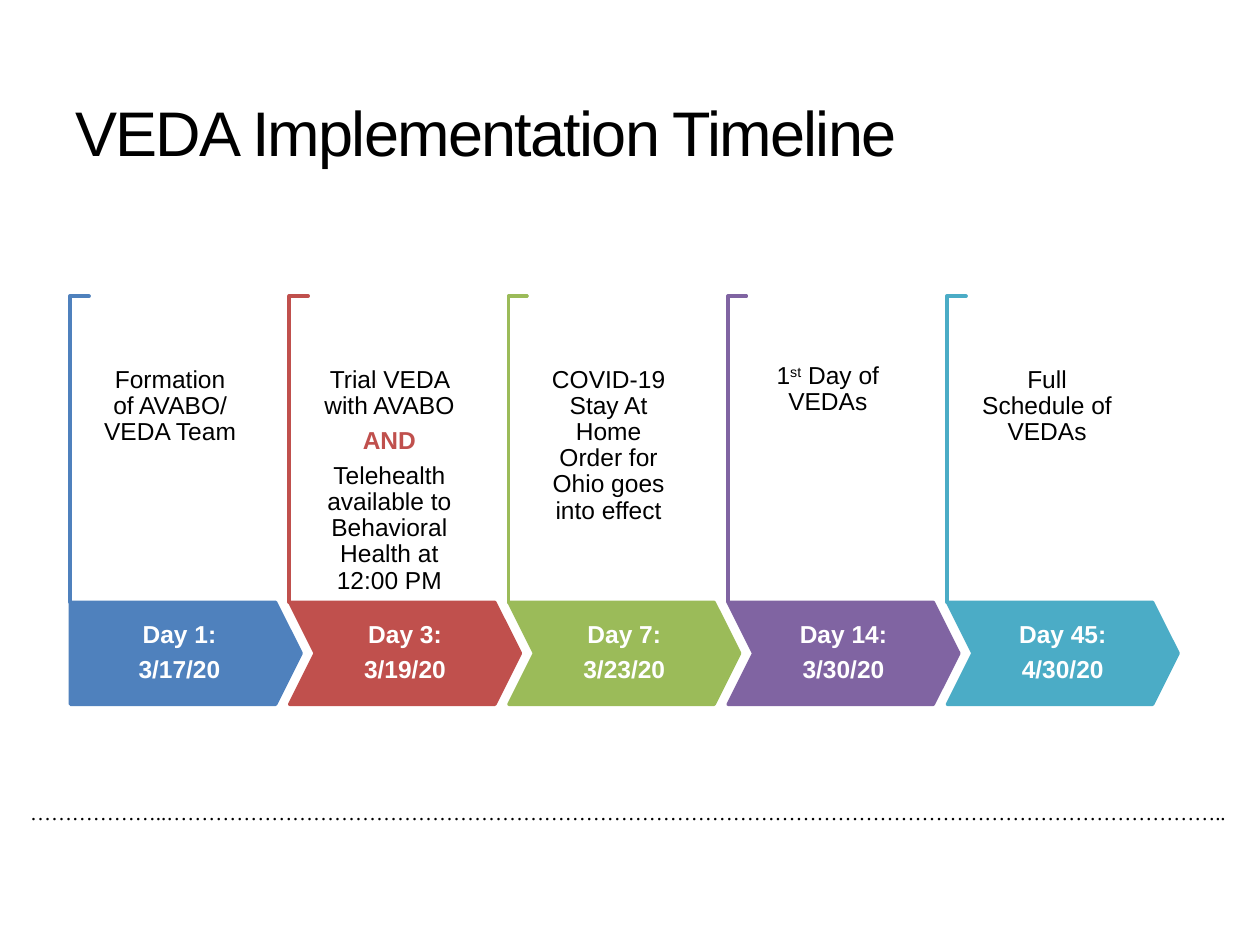
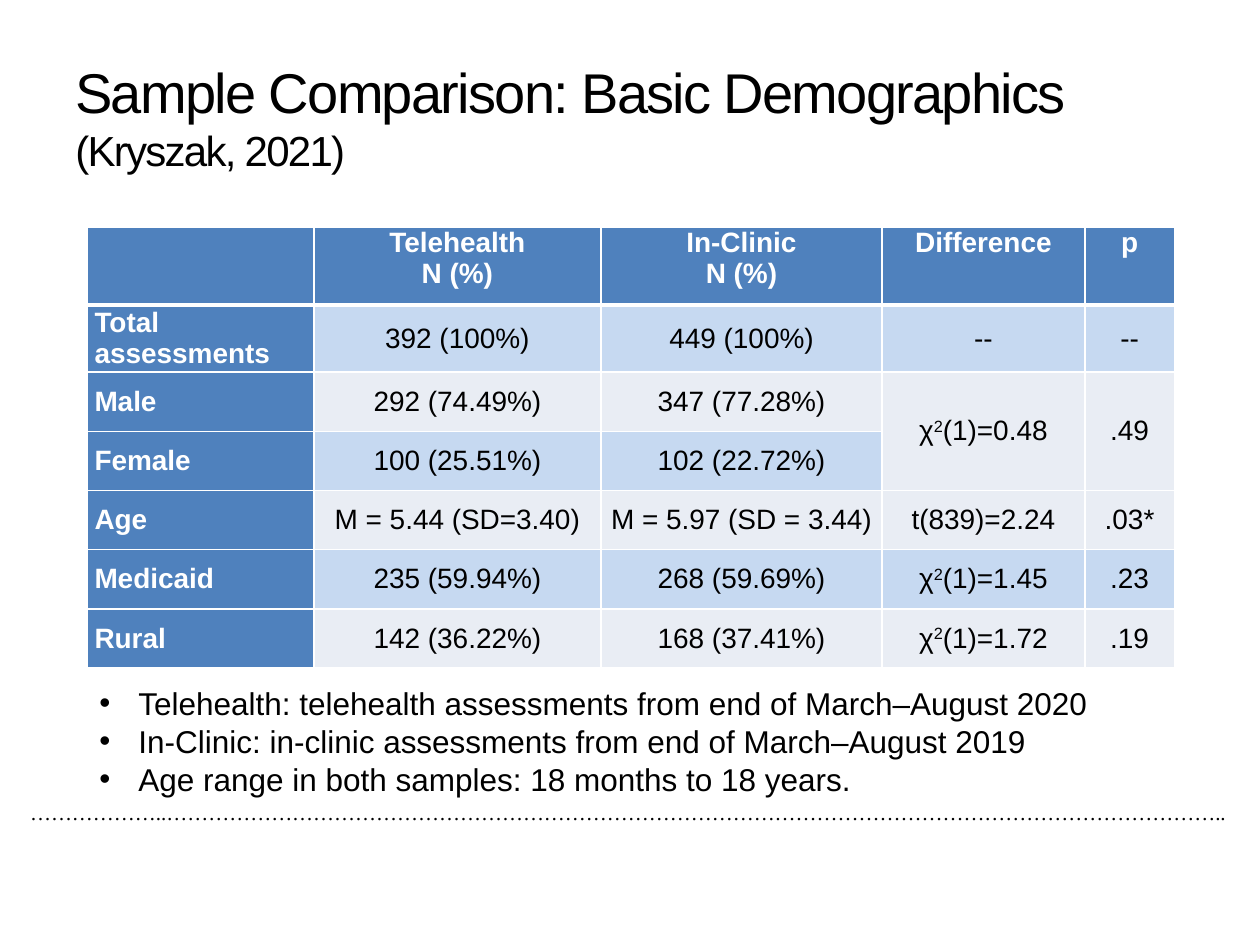
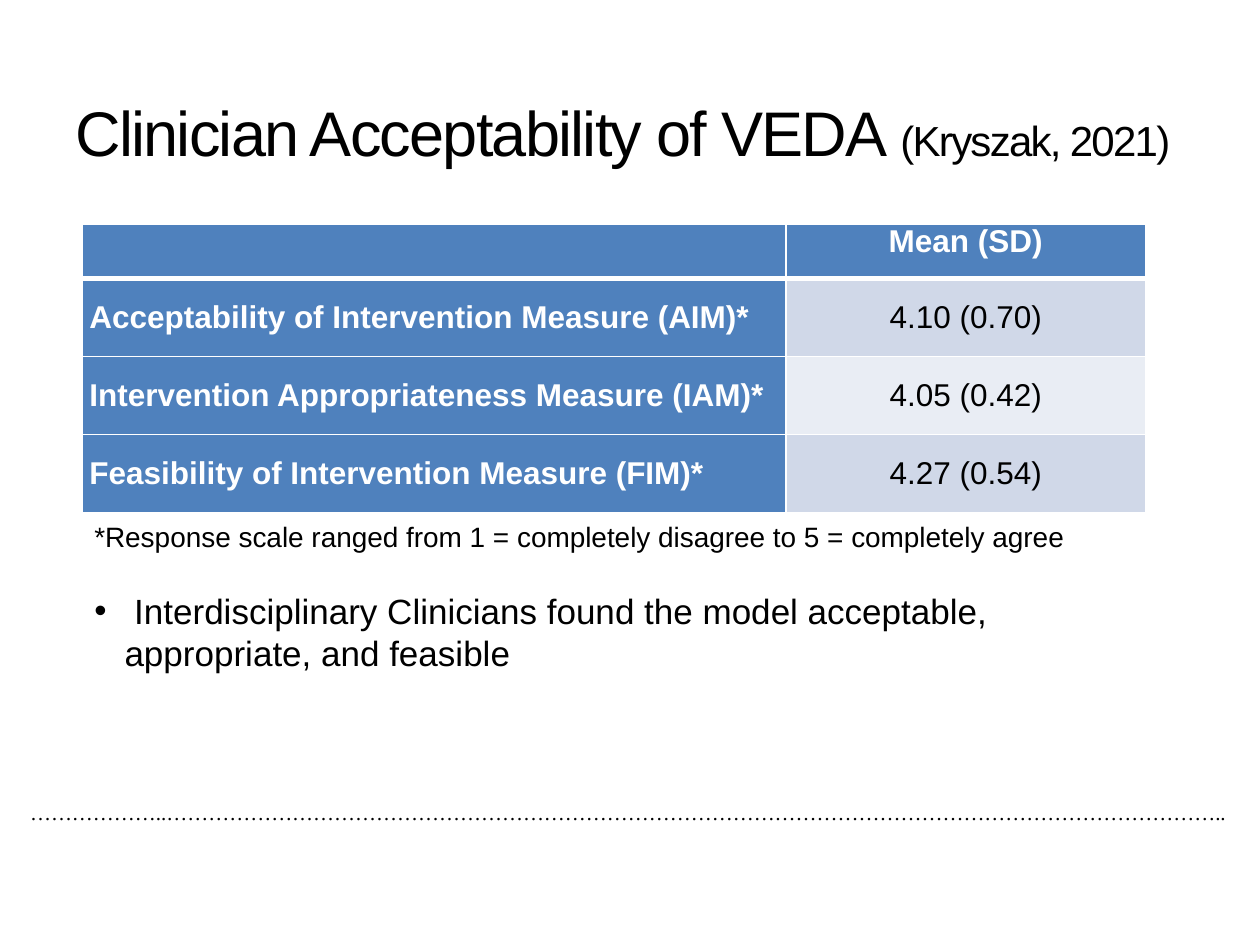
import pptx
import pptx.util
import pptx.dml.color
import pptx.enum.shapes
import pptx.enum.text
import pptx.oxml.ns
from lxml import etree

Inches, Pt = pptx.util.Inches, pptx.util.Pt
SHAPE = pptx.enum.shapes.MSO_SHAPE
ALIGN = pptx.enum.text.PP_ALIGN
MID = pptx.enum.text.MSO_ANCHOR.MIDDLE
TOP = pptx.enum.text.MSO_ANCHOR.TOP

HUES = {
    "black": "000000", "white": "FFFFFF",
    "blue": "4F81BD", "red": "C0504D", "green": "9BBB59",
    "purple": "8064A2", "teal": "4BACC6",
    "sky": "C6D9F1", "pale": "E9EDF4", "mist": "D0D8E8",
}
FACE = "Arial"
DOTS = "…" * 6 + ".." + "…" * 50 + ".."
CITE = ("(Kryszak, 2021)", {"size": 24})

# hue, day, date, paragraphs, space after each paragraph
STEPS = [
    ("blue", "Day 1:", "3/17/20", ["Formation of AVABO/", "VEDA Team"], 0),
    ("red", "Day 3:", "3/19/20",
     ["Trial VEDA with AVABO", [("AND", {"hue": "red", "bold": True})],
      "Telehealth available to Behavioral Health at 12:00 PM"], 5),
    ("green", "Day 7:", "3/23/20",
     ["COVID-19 Stay At Home Order for Ohio goes into effect"], 5),
    ("purple", "Day 14:", "3/30/20", ["1^st^ Day of VEDAs"], 0),
    ("teal", "Day 45:", "4/30/20", ["Full Schedule of VEDAs"], 0),
]

SAMPLE = {
    "at": (0.69, 1.8), "size": 16, "bands": ("sky", "pale"),
    "cols": [1.8, 2.28, 2.23, 1.61, 0.71],
    "rows": [0.62, 0.5] + [0.47] * 5,
    "cells": [
        ["", "Telehealth\nN (%)", "In-Clinic\nN (%)", "Difference", "p"],
        ["Total assessments", "392 (100%)", "449 (100%)", "--", "--"],
        ["Male", "292 (74.49%)", "347 (77.28%)", "χ^2^(1)=0.48", ".49"],
        ["Female", "100 (25.51%)", "102 (22.72%)", "", ""],
        ["Age", "M = 5.44 (SD=3.40)", "M = 5.97 (SD = 3.44)",
         "t(839)=2.24", ".03*"],
        ["Medicaid", "235 (59.94%)", "268 (59.69%)", "χ^2^(1)=1.45", ".23"],
        ["Rural", "142 (36.22%)", "168 (37.41%)", "χ^2^(1)=1.72", ".19"],
    ],
}
NOTES = [
    "Telehealth: telehealth assessments from end of March–August 2020",
    "In-Clinic: in-clinic assessments from end of March–August 2019",
    "Age range in both samples: 18 months to 18 years.",
]

RATING = {
    "at": (0.65, 1.78), "size": 18, "bands": ("mist", "pale"),
    "cols": [5.59, 2.85],
    "rows": [0.43] + [0.62] * 3,
    "cells": [
        ["", "Mean (SD)"],
        ["Acceptability of Intervention Measure (AIM)*", "4.10 (0.70)"],
        ["Intervention Appropriateness Measure (IAM)*", "4.05 (0.42)"],
        ["Feasibility of Intervention Measure (FIM)*", "4.27 (0.54)"],
    ],
}
SCALE = "*Response scale ranged from 1 = completely disagree to 5 = completely agree"
FOUND = " Interdisciplinary Clinicians found the model acceptable, appropriate, and feasible"


def rgb(hue):
    return pptx.dml.color.RGBColor.from_string(HUES[hue])


def child(node, tag, **attrs):
    return etree.SubElement(node, pptx.oxml.ns.qn(tag), attrs)


def add_run(para, text, size, hue="black", bold=False, face=FACE, track=0):
    """Add text to a paragraph; parts between ^ marks are superscript."""
    for i, part in enumerate(text.split("^")):
        run = para.add_run()
        run.text = part
        font = run.font
        font.size, font.name, font.bold = Pt(size), face, bold
        font.color.rgb = rgb(hue)
        props = run._r.get_or_add_rPr()
        if track:
            props.set("spc", str(track))
        if i % 2:
            props.set("baseline", "30000")


def write(frame, paras, align=ALIGN.LEFT, line=None, after=0, **base):
    """Fill a frame; a paragraph is a string or a list of (text, changes)."""
    for i, runs in enumerate(paras):
        para = frame.add_paragraph() if i else frame.paragraphs[0]
        para.alignment = align
        if line:
            para.line_spacing = line
        if after:
            para.space_after = Pt(after)
        for text, diff in [(runs, {})] if isinstance(runs, str) else runs:
            add_run(para, text, **{**base, **diff})


def add_text(slide, at, paras, anchor=TOP, inset=(0.1, 0.05, 0.1, 0.05), **style):
    frame = slide.shapes.add_textbox(*map(Inches, at)).text_frame
    frame.word_wrap = True
    frame.vertical_anchor = anchor
    (frame.margin_left, frame.margin_top,
     frame.margin_right, frame.margin_bottom) = map(Inches, inset)
    write(frame, paras, **style)
    return frame


def bullet(para, indent):
    props = para._p.get_or_add_pPr()
    props.set("marL", str(Inches(indent)))
    props.set("indent", str(-Inches(indent)))
    child(props, "a:buFont", typeface=FACE)
    child(props, "a:buChar", char="•")


def add_slide(deck, title, size, line=None):
    slide = deck.slides.add_slide(deck.slide_layouts[6])
    rule = add_text(slide, (0.14, 6.3, 9.72, 0.3), [DOTS], size=12,
                    face="Times New Roman")
    rule.word_wrap = False
    add_text(slide, (0.5, 0.3, 9, 1.25), [title], anchor=MID, line=line,
             size=size, track=-100)
    return slide


def add_form(slide, kind, at, fill, edge, adjust):
    form = slide.shapes.add_shape(kind, *map(Inches, at))
    form.shadow.inherit = False
    form.fill.solid()
    form.fill.fore_color.rgb = rgb(fill)
    form.line.color.rgb = rgb(edge)
    form.line.width = Pt(2)
    for i, value in enumerate(adjust):
        form.adjustments[i] = value
    return form


def add_step(slide, i, hue, day, date, paras, after):
    left, base, thin = 0.56 + 1.74 * i, 4.78, 0.15
    tall = 2.43
    mid = base - tall / 2
    post = add_form(slide, SHAPE.CORNER,
                    (left + 0.07 - tall / 2, mid - thin / 2, tall, thin),
                    "white", hue, (0.01, 0.01))
    post.rotation = 90
    kind = SHAPE.CHEVRON if i else SHAPE.PENTAGON
    add_form(slide, kind, (left, base, 1.83, 0.81), hue, hue, (0.25,))
    shift, wide = (0.2, 1.43) if i else (0, 1.73)
    add_text(slide, (left + shift, base, wide, 0.81), [day, date], anchor=MID,
             inset=(0.1, 0.19, 0.1, 0.19), align=ALIGN.CENTER, line=0.9,
             after=5, size=14, hue="white", bold=True)
    add_text(slide, (left + 0.14, 2.44, 1.49, 1.92), paras,
             inset=(0.12, 0.47, 0.31, 0), align=ALIGN.CENTER, line=Pt(15),
             after=after, size=14)


def edge_cell(cell, row):
    """Draw white borders, thick between the header and the body."""
    props = cell._tc.get_or_add_tcPr()
    thick = {0: "a:lnB", 1: "a:lnT"}.get(row)
    for spot, tag in enumerate(("a:lnL", "a:lnR", "a:lnT", "a:lnB")):
        line = etree.Element(pptx.oxml.ns.qn(tag),
                             w=str(Pt(3 if tag == thick else 1)))
        child(child(line, "a:solidFill"), "a:srgbClr", val=HUES["white"])
        props.insert(spot, line)


def add_grid(slide, data):
    cols, rows = data["cols"], data["rows"]
    spot = (*data["at"], sum(cols), sum(rows))
    table = slide.shapes.add_table(len(rows), len(cols),
                                   *map(Inches, spot)).table
    table.first_row = table.horz_banding = False
    for col, wide in zip(table.columns, cols):
        col.width = Inches(wide)
    for row, tall in zip(table.rows, rows):
        row.height = Inches(tall)
    for r, texts in enumerate(data["cells"]):
        for c, text in enumerate(texts):
            cell = table.cell(r, c)
            head = r == 0 or c == 0
            cell.margin_left = cell.margin_right = Inches(0.06)
            cell.margin_top = cell.margin_bottom = 0
            cell.vertical_anchor = MID if r else TOP
            cell.fill.solid()
            cell.fill.fore_color.rgb = rgb(
                "blue" if head else data["bands"][(r - 1) % 2])
            edge_cell(cell, r)
            if text:
                write(cell.text_frame, text.split("\n"),
                      align=ALIGN.CENTER if c else ALIGN.LEFT,
                      size=data["size"], bold=head,
                      hue="white" if head else "black")
    return table


def main():
    deck = pptx.Presentation()
    deck.slide_width, deck.slide_height = Inches(10), Inches(7.5)

    slide = add_slide(deck, "VEDA Implementation Timeline", 36, Pt(60))
    for i, step in enumerate(STEPS):
        add_step(slide, i, *step)

    slide = add_slide(
        deck, [("Sample Comparison: Basic Demographics ", {}), CITE], 32)
    table = add_grid(slide, SAMPLE)
    for c in (3, 4):
        table.cell(2, c).merge(table.cell(3, c))
    frame = add_text(slide, (0.69, 5.38, 8.62, 1.01), NOTES, size=18)
    for para in frame.paragraphs:
        bullet(para, 0.31)

    slide = add_slide(
        deck, [("Clinician Acceptability of VEDA ", {}), CITE], 36, Pt(60))
    add_grid(slide, RATING)
    frame = add_text(slide, (0.65, 4.07, 8.44, 1.65),
                     [SCALE, [(FOUND, {"size": 20})]], size=16)
    found = frame.paragraphs[1]
    found.space_before = Pt(21)
    bullet(found, 0.24)

    deck.save("out.pptx")


if __name__ == "__main__":
    main()
